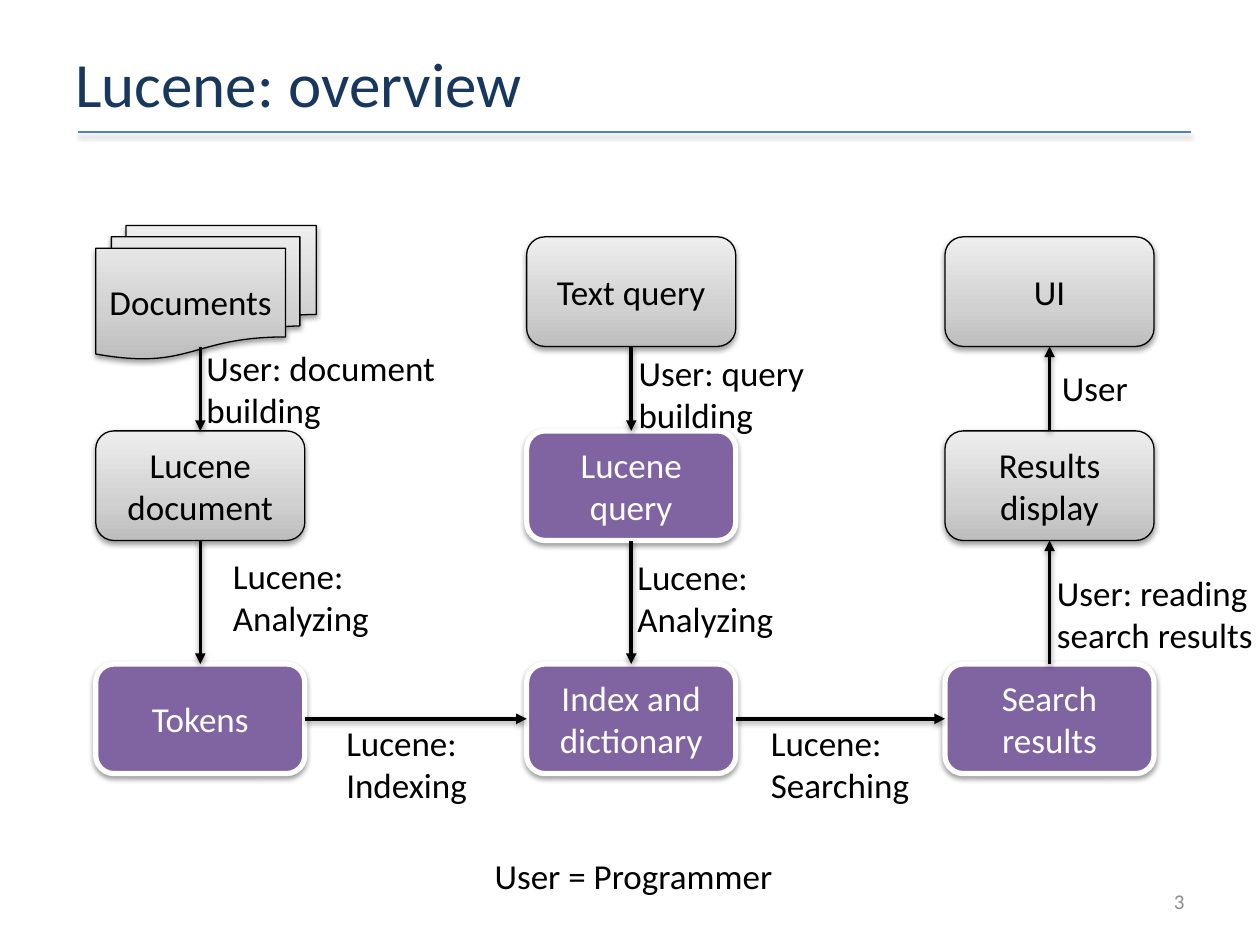
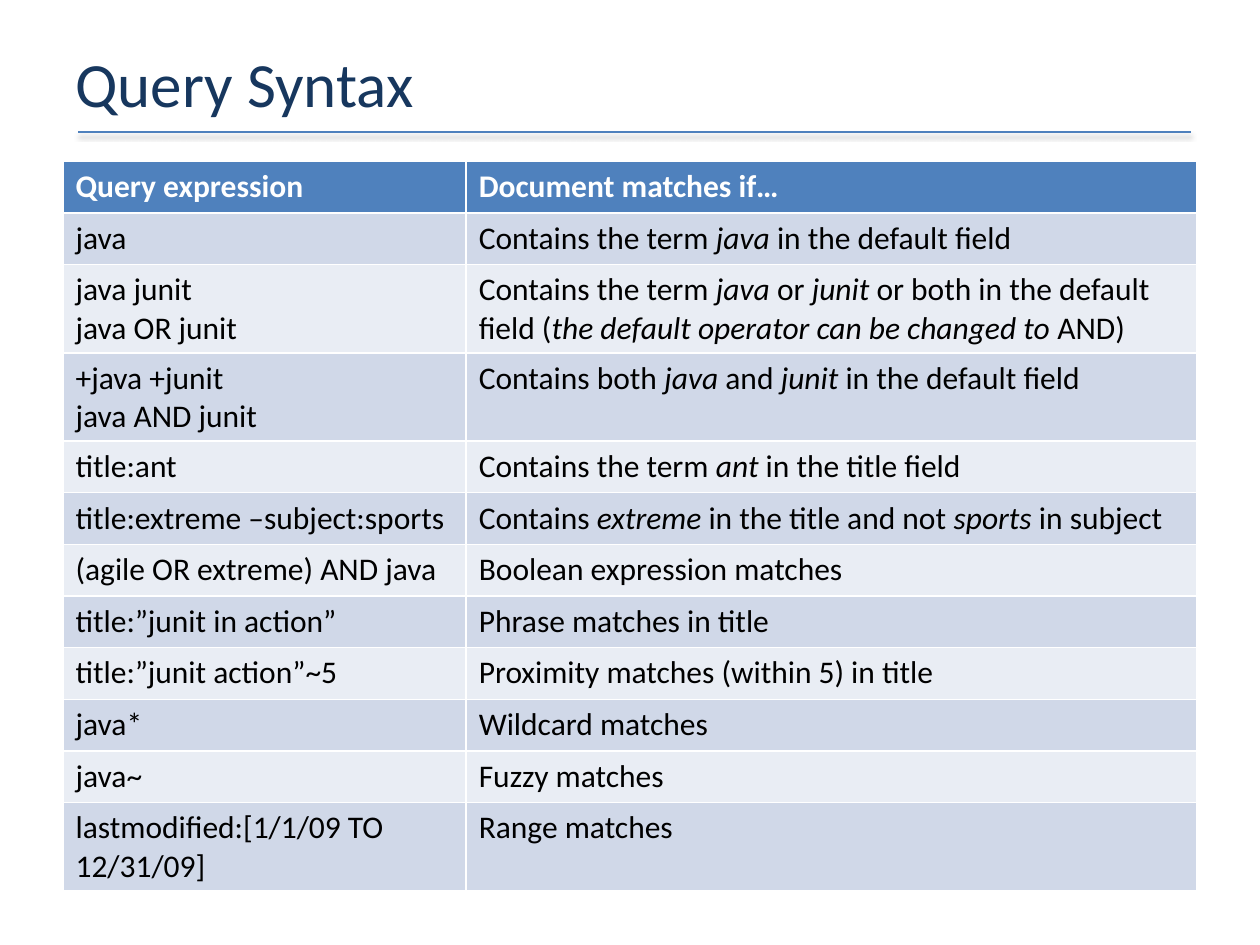
from copy import deepcopy
from lxml import etree
from pptx import Presentation
from pptx import util as u
from pptx.dml.color import RGBColor
from pptx.enum import shapes, text
from pptx.oxml.ns import qn

rgb = RGBColor.from_string
NAVY, BLUE, PURPLE, GREY = "17375E", "4F81BD", "8064A2", "8C8C8C"
BLACK, WHITE = "000000", "FFFFFF"
BANDS = ["E9EDF4", "D0D8E8"]
SILVER = [(0, "BDBDBD"), (0.35, "D1D1D1"), (1, "EEEEEE")]
LEFT, MIDDLE, RIGHT = text.PP_ALIGN.LEFT, text.PP_ALIGN.CENTER, text.PP_ALIGN.RIGHT
TOP, CENTRE = text.MSO_ANCHOR.TOP, text.MSO_ANCHOR.MIDDLE


def write(tf, words, size=20, colour=BLACK, align=LEFT, anchor=TOP, bold=False):
    for k, v in {"word_wrap": True, "vertical_anchor": anchor}.items():
        setattr(tf, k, v)
    for i, line in enumerate(words.split("\n")):
        p = tf.add_paragraph() if i else tf.paragraphs[0]
        p.alignment = align
        for j, part in enumerate(line.split("_")):
            if part:
                r = p.add_run()
                r.text = part
                r.font.color.rgb = rgb(colour)
                look = {"name": "Calibri", "size": u.Pt(size), "bold": bold, "italic": j % 2 == 1}
                for k, v in look.items():
                    setattr(r.font, k, v)


def finish(sp, colour, width):
    sp.line.color.rgb = rgb(colour)
    sp.line.width = u.Pt(width)
    effects = etree.SubElement(sp._element.spPr, qn("a:effectLst"))
    shadow = etree.SubElement(effects, qn("a:outerShdw"), blurRad="40000", dist="20000",
                              dir="5400000", rotWithShape="0")
    tint = etree.SubElement(shadow, qn("a:srgbClr"), val=BLACK)
    etree.SubElement(tint, qn("a:alpha"), val="38000")


prs = Presentation()
prs.slide_width, prs.slide_height = u.Inches(10), u.Inches(7.5)

slides = []
for title in ["Lucene: overview", "Query Syntax"]:
    s = prs.slides.add_slide(prs.slide_layouts[6])
    rule = s.shapes.add_connector(shapes.MSO_CONNECTOR.STRAIGHT,
                                  *map(u.Inches, (0.62, 1.05, 9.45, 1.05)))
    finish(rule, BLUE, 1)
    tb = s.shapes.add_textbox(*map(u.Inches, (0.5, 0.3, 9, 0.71)))
    write(tb.text_frame, title, 36, NAVY, anchor=CENTRE)
    slides.append(s)
overview, syntax = slides

cols, rows = [0.76, 4.18, 7.5], [1.88, 3.42, 5.27]
box_w, box_h = 1.66, 0.87
boxes = {}
for name, col, row, ours in [
    ("Documents", 0, 0, False),
    ("Lucene document", 0, 1, False),
    ("Tokens", 0, 2, True),
    ("Text query", 1, 0, False),
    ("Lucene query", 1, 1, True),
    ("Index and dictionary", 1, 2, True),
    ("UI", 2, 0, False),
    ("Results display", 2, 1, False),
    ("Search results", 2, 2, True),
]:
    kind, at = shapes.MSO_SHAPE.ROUNDED_RECTANGLE, (cols[col], rows[row], box_w, box_h)
    if name == "Documents":
        kind, at = shapes.MSO_SHAPE.FLOWCHART_MULTIDOCUMENT, (cols[0], 1.79, 1.75, 1.06)
    sp = overview.shapes.add_shape(kind, *map(u.Inches, at))
    if ours:
        sp.fill.solid()
        sp.fill.fore_color.rgb = rgb(PURPLE)
    else:
        sp.fill.gradient()
        sp.fill.gradient_angle = 90
        stops = sp._element.spPr.find(".//" + qn("a:gsLst"))
        stops.insert(1, deepcopy(stops[0]))
        for stop, (share, colour) in zip(sp.fill.gradient_stops, SILVER):
            stop.position = share
            stop.color.rgb = rgb(colour)
    finish(sp, WHITE if ours else BLACK, 3 if ours else 0.75)
    write(sp.text_frame, name, 20, WHITE if ours else BLACK, MIDDLE, CENTRE)
    boxes[name] = sp

for start, out, end, into in [
    ("Documents", 2, "Lucene document", 0),
    ("Lucene document", 2, "Tokens", 0),
    ("Tokens", 3, "Index and dictionary", 1),
    ("Index and dictionary", 3, "Search results", 1),
    ("Text query", 2, "Lucene query", 0),
    ("Lucene query", 2, "Index and dictionary", 0),
    ("Search results", 0, "Results display", 2),
    ("Results display", 0, "UI", 2),
]:
    x, y = cols[0] + box_w / 2, rows[0] + box_h
    arrow = overview.shapes.add_connector(shapes.MSO_CONNECTOR.STRAIGHT,
                                          *map(u.Inches, (x, y, x, rows[1])))
    if start != "Documents":
        arrow.begin_connect(boxes[start], out)
    arrow.end_connect(boxes[end], into)
    finish(arrow, BLACK, 2)
    etree.SubElement(arrow.line._get_or_add_ln(), qn("a:tailEnd"), type="triangle")

for words, x, y, w, h, size, colour, align, anchor in [
    ("User: document building", 1.54, 2.7, 2.07, 0.77, 20, BLACK, LEFT, TOP),
    ("Lucene: Analyzing", 1.75, 4.35, 1.36, 0.77, 20, BLACK, LEFT, TOP),
    ("Lucene: Indexing", 2.65, 5.68, 1.36, 0.77, 20, BLACK, LEFT, TOP),
    ("User: query building", 4.97, 2.74, 1.73, 0.77, 20, BLACK, LEFT, TOP),
    ("Lucene: Analyzing", 4.96, 4.36, 1.36, 0.77, 20, BLACK, LEFT, TOP),
    ("Lucene: Searching", 6.02, 5.68, 1.36, 0.77, 20, BLACK, LEFT, TOP),
    ("User", 8.33, 2.86, 1.36, 0.44, 20, BLACK, LEFT, TOP),
    ("User: reading search results", 8.29, 4.49, 1.91, 0.77, 20, BLACK, LEFT, TOP),
    ("User = Programmer ", 3.42, 6.73, 3.28, 0.44, 20, BLACK, MIDDLE, TOP),
    ("3", 7.17, 6.95, 2.33, 0.4, 12, GREY, RIGHT, CENTRE),
]:
    tb = overview.shapes.add_textbox(*map(u.Inches, (x, y, w, h)))
    write(tb.text_frame, words, size, colour, align, anchor)

queries = [
    ("Query expression", "Document matches if…"),
    ("java", "Contains the term _java_ in the default field"),
    ("java junit\njava OR junit", "Contains the term _java_ or _junit_ or both in the default field "
     "(_the default operator can be changed to _AND)"),
    ("+java +junit\njava AND junit", "Contains both _java_ and _junit_ in the default field"),
    ("title:ant", "Contains the term _ant_ in the title field"),
    ("title:extreme –subject:sports", "Contains _extreme_ in the title and not _sports_ in subject"),
    ("(agile OR extreme) AND java", "Boolean expression matches"),
    ("title:”junit in action”", "Phrase matches in title"),
    ("title:”junit action”~5", "Proximity matches (within 5) in title"),
    ("java*", "Wildcard matches"),
    ("java~", "Fuzzy matches"),
    ("lastmodified:[1/1/09 TO 12/31/09]", "Range matches"),
]
row_h = 0.41
table = syntax.shapes.add_table(len(queries), 2, *map(u.Inches, (0.5, 1.28, 9, row_h * len(queries)))).table
for column, width in zip(table.columns, (3.2, 5.8)):
    column.width = u.Inches(width)
for i, query in enumerate(queries):
    table.rows[i].height = u.Inches(row_h)
    for cell, words in zip(table.rows[i].cells, query):
        cell.fill.solid()
        cell.fill.fore_color.rgb = rgb(BANDS[i % 2] if i else BLUE)
        write(cell.text_frame, words, 18, BLACK if i else WHITE, bold=i == 0)

prs.save("out.pptx")
